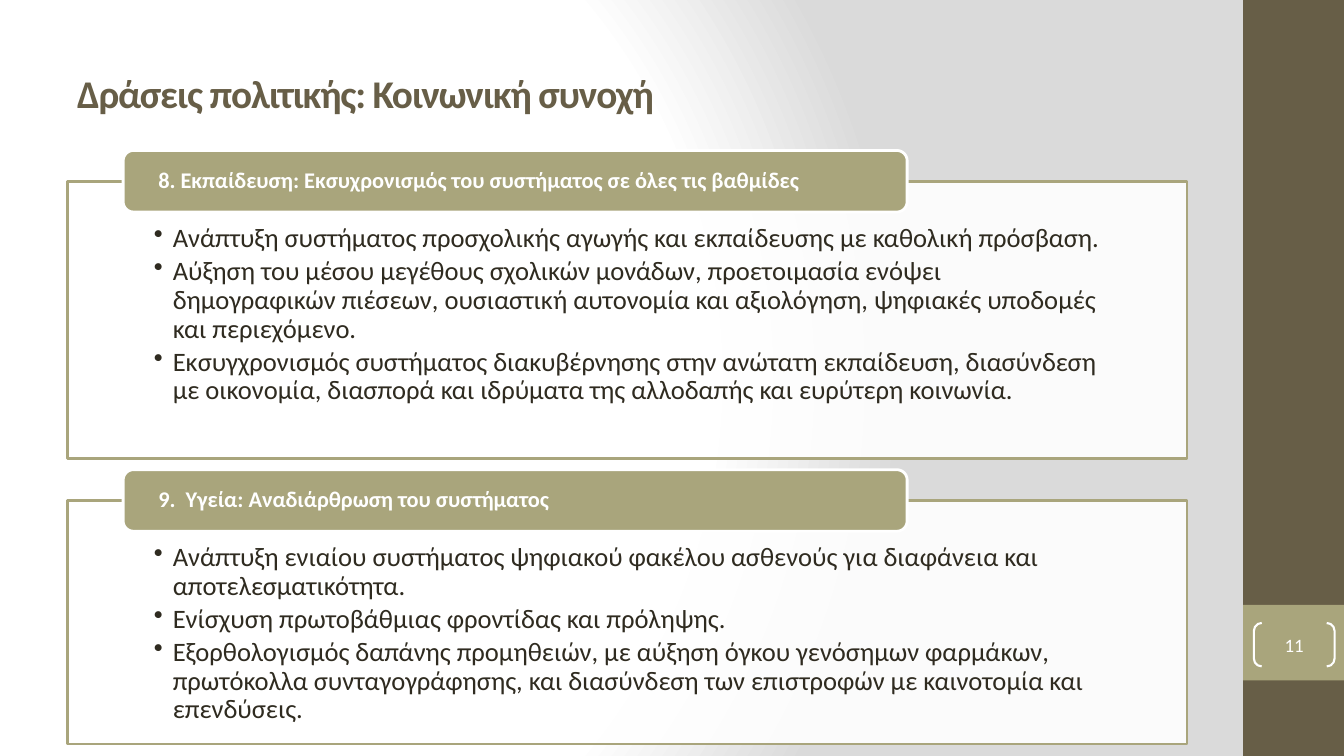
from lxml import etree
from pptx import Presentation
from pptx.dml.color import RGBColor
from pptx.enum.shapes import MSO_SHAPE as SHAPE
from pptx.enum.text import MSO_ANCHOR as ANCHOR, PP_ALIGN as ALIGN
from pptx.oxml import parse_xml
from pptx.oxml.ns import qn
from pptx.util import Pt

BROWN = RGBColor(0x67, 0x5E, 0x47)
OLIVE = RGBColor(0xA9, 0xA5, 0x7C)
DARK = RGBColor(0x2F, 0x2B, 0x20)
WHITE = RGBColor(0xFF, 0xFF, 0xFF)

BACKGROUND = """
<a:gradFill xmlns:a="http://schemas.openxmlformats.org/drawingml/2006/main" rotWithShape="1">
  <a:gsLst>
    <a:gs pos="0"><a:srgbClr val="FFFFFF"/></a:gs>
    <a:gs pos="75000"><a:srgbClr val="FFFFFF"/></a:gs>
    <a:gs pos="100000"><a:srgbClr val="DADADA"/></a:gs>
  </a:gsLst>
  <a:path path="circle"><a:fillToRect l="20000" t="50000" r="100000" b="50000"/></a:path>
</a:gradFill>"""

SECTIONS = [
    (129.5, 198, "8. Εκπαίδευση: Εκσυχρονισμός του συστήματος σε όλες τις βαθμίδες", [
        "Ανάπτυξη συστήματος προσχολικής αγωγής και εκπαίδευσης με καθολική πρόσβαση.",
        "Αύξηση του μέσου μεγέθους σχολικών μονάδων, προετοιμασία ενόψει δημογραφικών "
        "πιέσεων, ουσιαστική αυτονομία και αξιολόγηση, ψηφιακές υποδομές και περιεχόμενο.",
        "Εκσυγχρονισμός συστήματος διακυβέρνησης στην ανώτατη εκπαίδευση, διασύνδεση "
        "με οικονομία, διασπορά και ιδρύματα της αλλοδαπής και ευρύτερη κοινωνία.",
    ]),
    (357.5, 174, "9.  Υγεία: Αναδιάρθρωση του συστήματος", [
        "Ανάπτυξη ενιαίου συστήματος ψηφιακού φακέλου ασθενούς για διαφάνεια και "
        "αποτελεσματικότητα.",
        "Ενίσχυση πρωτοβάθμιας φροντίδας και πρόληψης.",
        "Εξορθολογισμός δαπάνης προμηθειών, με αύξηση όγκου γενόσημων φαρμάκων, "
        "πρωτόκολλα συνταγογράφησης, και διασύνδεση των επιστροφών με καινοτομία και "
        "επενδύσεις.",
    ]),
]


def add_box(kind, left, top, width, height, fill=None, line=None, weight=2, insets=(0, 0, 0, 0)):
    sp = s.shapes.add_shape(kind, Pt(left), Pt(top), Pt(width), Pt(height))
    sp.shadow.inherit = False
    for part, color in ((sp.fill, fill), (sp.line.fill, line)):
        if color is None:
            part.background()
        else:
            part.solid()
            part.fore_color.rgb = color
    if line is not None:
        sp.line.width = Pt(weight)
    tf = sp.text_frame
    tf.word_wrap = True
    tf.vertical_anchor = ANCHOR.MIDDLE
    tf.margin_left, tf.margin_top, tf.margin_right, tf.margin_bottom = map(Pt, insets)
    return sp


def add_run(p, text, size, color, bold=False, align=ALIGN.LEFT):
    p.alignment = align
    r = p.add_run()
    r.text = text
    r.font.name = "Calibri"
    r.font.size = Pt(size)
    r.font.bold = bold
    r.font.color.rgb = color
    return r


prs = Presentation()
prs.slide_width, prs.slide_height = Pt(960), Pt(540)
s = prs.slides.add_slide(prs.slide_layouts[6])

s.background.fill.gradient()
grad = s.element.find(".//" + qn("a:gradFill"))
grad.getparent().replace(grad, parse_xml(BACKGROUND))

add_box(SHAPE.RECTANGLE, 888, 0, 72, 540, BROWN)
add_box(SHAPE.RECTANGLE, 888, 432, 72, 54, OLIVE)

title = s.shapes.add_textbox(Pt(48), Pt(21.6), Pt(800), Pt(90))
tf = title.text_frame
tf.word_wrap = True
tf.vertical_anchor = ANCHOR.MIDDLE
r = add_run(tf.paragraphs[0], "Δράσεις πολιτικής: Κοινωνική συνοχή", 28, BROWN, bold=True)
r.font._element.set("spc", "-80")

for top, height, heading, bullets in SECTIONS:
    body = add_box(SHAPE.RECTANGLE, 48, top, 800, height, WHITE, OLIVE, insets=(62, 31, 62, 11))
    color = body.fill._xPr.find(qn("a:solidFill"))[0]
    etree.SubElement(color, qn("a:alpha")).set("val", "90000")
    tf = body.text_frame
    tf.vertical_anchor = ANCHOR.TOP
    for i, bullet in enumerate(bullets):
        p = tf.add_paragraph() if i else tf.paragraphs[0]
        p.line_spacing = 0.9
        p.space_after = Pt(3)
        add_run(p, bullet, 19, DARK)
        pPr = p._p.get_or_add_pPr()
        pPr.set("marL", str(Pt(13.5)))
        pPr.set("indent", str(-Pt(13.5)))
        etree.SubElement(pPr, qn("a:buChar")).set("char", "•")

    header = add_box(SHAPE.ROUNDED_RECTANGLE, 88, top - 22, 560, 44, OLIVE, WHITE,
                     insets=(23, 0, 23, 0))
    p = header.text_frame.paragraphs[0]
    p.line_spacing = 0.9
    add_run(p, heading, 16, WHITE, bold=True)

number = add_box(SHAPE.DOUBLE_BRACKET, 895.7, 445, 57.6, 31, line=WHITE, weight=1.5)
number.adjustments[0] = 0.18
add_run(number.text_frame.paragraphs[0], "11", 13.5, WHITE, align=ALIGN.CENTER)

prs.save("out.pptx")
